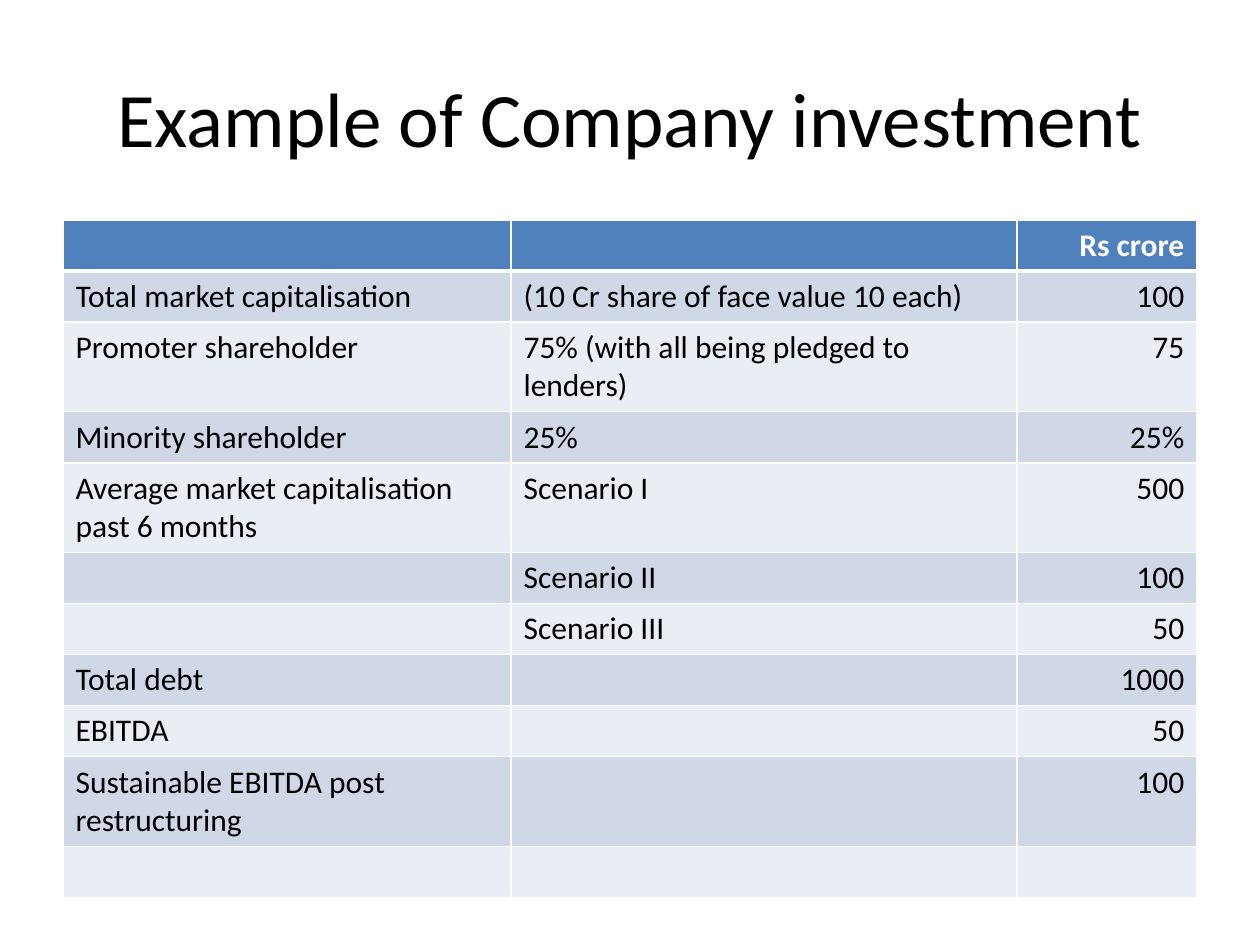
from lxml import etree
from pptx import Presentation
from pptx.dml.color import RGBColor
from pptx.enum.text import MSO_ANCHOR, PP_ALIGN
from pptx.oxml.ns import qn
from pptx.util import Pt

LEFT, CENTER, RIGHT = PP_ALIGN.LEFT, PP_ALIGN.CENTER, PP_ALIGN.RIGHT
MIDDLE, TOP = MSO_ANCHOR.MIDDLE, MSO_ANCHOR.TOP
TITLE_ONLY = 5
EMU_PER_PX = 914400 / 126
FONT = "Calibri"
BLACK, WHITE = "000000", "FFFFFF"
HEADER_FILL = "4F81BD"
BAND_FILLS = ("E9EDF4", "D0D8E8")
COLUMN_WIDTHS = (448, 506, 180)
ROW_HEIGHT = 51

FIGURES = [
    ("", "", "Rs crore"),
    ("Total market capitalisation", "(10 Cr share of face value 10 each)", "100"),
    ("Promoter shareholder", "75% (with all being pledged to lenders)", "75"),
    ("Minority shareholder", "25%", "25%"),
    ("Average market capitalisation past 6 months", "Scenario I", "500"),
    ("", "Scenario II", "100"),
    ("", "Scenario III", "50"),
    ("Total debt", "", "1000"),
    ("EBITDA", "", "50"),
    ("Sustainable EBITDA post restructuring", "", "100"),
    ("", "", ""),
]


def px(length):
    return round(length * EMU_PER_PX)


def color(value):
    return RGBColor.from_string(value)


def write(frame, text, size=18, fill=BLACK, bold=False, align=LEFT):
    paragraph = frame.paragraphs[0]
    paragraph.alignment = align
    paragraph.font.size = Pt(size)
    if text:
        run = paragraph.add_run()
        run.text = text
        run.font.name = FONT
        run.font.size = Pt(size)
        run.font.bold = bold
        run.font.color.rgb = color(fill)


def set_borders(cell, **widths):
    properties = cell._tc.get_or_add_tcPr()
    for side, width in widths.items():
        line = etree.SubElement(properties, qn(f"a:ln{side}"), w=str(Pt(width)))
        solid = etree.SubElement(line, qn("a:solidFill"))
        etree.SubElement(solid, qn("a:srgbClr"), val=WHITE)


def add_title(slide, left, top, width, height):
    title = slide.shapes.title
    title.left, title.top = px(left), px(top)
    title.width, title.height = px(width), px(height)
    title.text_frame.vertical_anchor = MIDDLE
    write(title.text_frame, "Example of Company investment", size=44, align=CENTER)


def add_figures(slide, left, top, width, height):
    table = slide.shapes.add_table(
        len(FIGURES), len(COLUMN_WIDTHS), px(left), px(top), px(width), px(height)
    ).table
    for column, column_width in zip(table.columns, COLUMN_WIDTHS):
        column.width = px(column_width)
    for row_index, entries in enumerate(FIGURES):
        table.rows[row_index].height = px(ROW_HEIGHT)
        header = row_index == 0
        for column_index, entry in enumerate(entries):
            cell = table.cell(row_index, column_index)
            cell.vertical_anchor = TOP
            set_borders(cell, L=1, R=1, T=3 if row_index == 1 else 1, B=3 if header else 1)
            cell.fill.solid()
            cell.fill.fore_color.rgb = color(HEADER_FILL if header else BAND_FILLS[row_index % 2])
            write(
                cell.text_frame,
                entry,
                fill=WHITE if header else BLACK,
                bold=header,
                align=RIGHT if column_index == 2 else LEFT,
            )


def main():
    deck = Presentation()
    deck.slide_width, deck.slide_height = px(1260), px(945)
    slide = deck.slides.add_slide(deck.slide_layouts[TITLE_ONLY])
    add_title(slide, 63, 38, 1134, 158)
    add_figures(slide, 63, 220, sum(COLUMN_WIDTHS), ROW_HEIGHT * len(FIGURES))
    deck.save("out.pptx")


if __name__ == "__main__":
    main()
